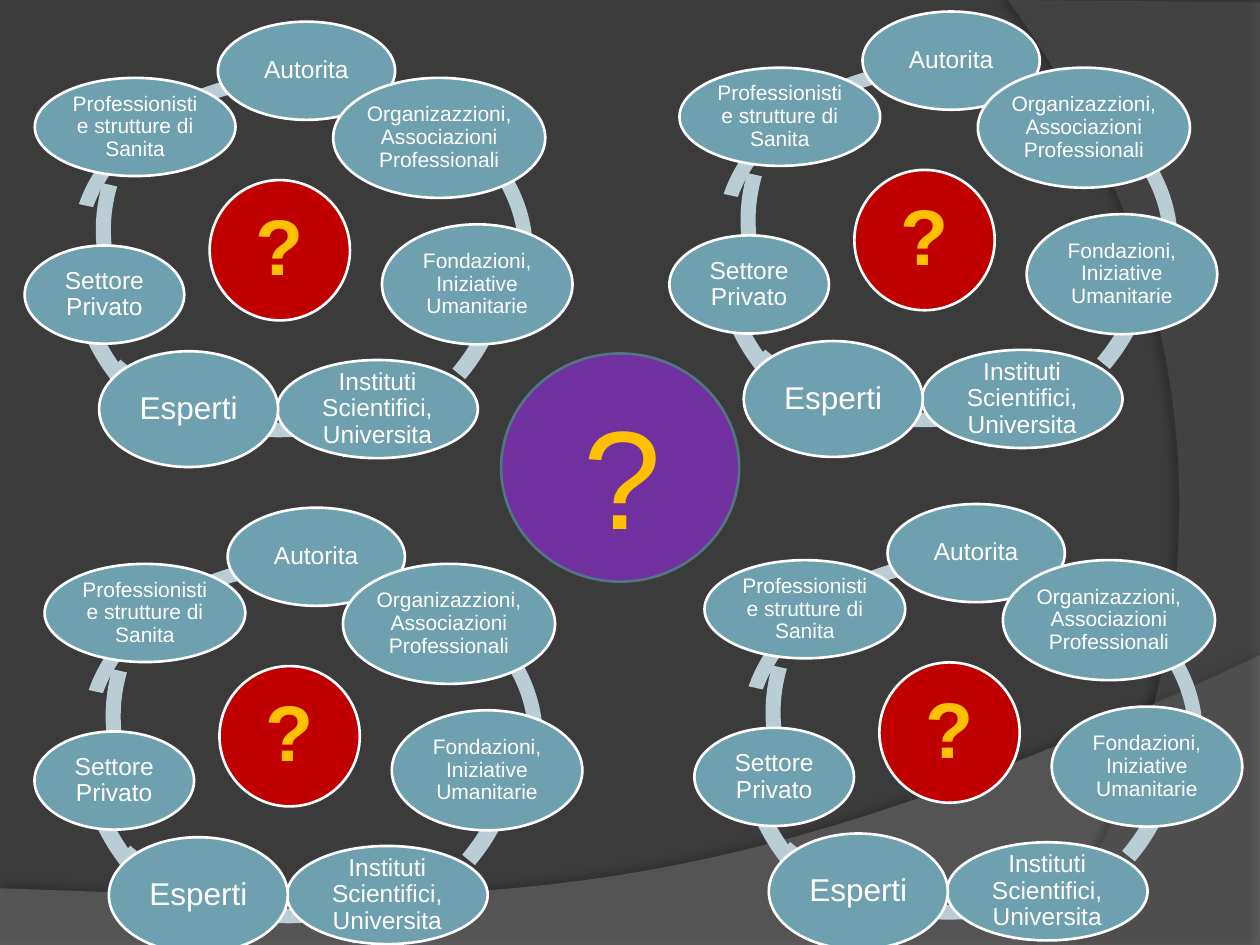
from dataclasses import dataclass

from lxml.etree import SubElement
from pptx import Presentation
from pptx.dml.color import RGBColor
from pptx.enum.shapes import MSO_SHAPE
from pptx.enum.text import MSO_ANCHOR, PP_ALIGN
from pptx.oxml.ns import qn
from pptx.util import Pt


@dataclass(frozen=True)
class Theme:
    """Colours, font and type sizes of the slide."""
    background: str = "3B3B3B"
    wave: str = "7F7F7F"
    side: str = "5E5E5E"
    shadow: str = "000000"
    ring: str = "BACDD4"
    member: str = "6EA0B0"
    core: str = "C00000"
    hub: str = "7030A0"
    hub_line: str = "517682"
    white: str = "FFFFFF"
    question: str = "FFC000"
    font: str = "Arial"
    small: int = 12
    medium: int = 14
    large: int = 18
    core_size: int = 45
    hub_size: int = 80
    line: float = 1.5


THEME = Theme()
CLUSTER_OFFSETS = [(0, 0), (368.4, -5.8), (5.6, 277.7), (382.7, 275.6)]
RING_ARCS = [
    ((37.4, 18, 232.6, 244.1), 132.9, 169.36),
    ((28.2, 30.2, 207.4, 207.4), 97.04, 131.35),
    ((33.6, 42.5, 251.3, 207.4), 72.2, 100.42),
    ((33.6, 29.5, 256.3, 236.2), 34.8, 73.2),
    ((53.2, 23, 240.5, 236.2), 7.26, 39.27),
    ((40.4, 40.3, 264.2, 207.4), 192.13, 6.39),
    ((54.8, 23.8, 241.9, 215.3), 163.25, 192.89),
]
CORE_FRAME = (119.8, 102.9, 80.2, 80.2)
MEMBERS = [
    ("Autorita", THEME.medium, (124.5, 12.4, 101.3, 56.1)),
    ("Organizazzioni, Associazioni Professionali", THEME.small, (190.4, 44.5, 121.2, 68.6)),
    ("Fondazioni, Iniziative Umanitarie", THEME.small, (218.3, 128.2, 108.9, 68.6)),
    ("Instituti Scientifici, Universita", THEME.medium, (158.4, 205.7, 114.7, 56.1)),
    ("Esperti", THEME.large, (56.6, 200.7, 102.3, 66.2)),
    ("Settore Privato", THEME.medium, (14.1, 140.3, 91.2, 56.1)),
    ("Professionisti e strutture di Sanita", THEME.small, (19.9, 44.5, 114.7, 56.1)),
]


def to_points(frame, offset=(0, 0)):
    """Return a frame as lengths, moved by an offset."""
    left, top, width, height = frame
    return Pt(left + offset[0]), Pt(top + offset[1]), Pt(width), Pt(height)


def paint(shape, fill, line=None):
    """Fill a shape, and outline it when a line colour is given."""
    shape.shadow.inherit = False
    shape.fill.solid()
    shape.fill.fore_color.rgb = RGBColor.from_string(fill)
    if line:
        shape.line.color.rgb = RGBColor.from_string(line)
        shape.line.width = Pt(THEME.line)
    else:
        shape.line.fill.background()


def write(shape, text, size, color, bold=False):
    """Set the text of a shape as one run."""
    shape.text_frame.word_wrap = True
    para = shape.text_frame.paragraphs[0]
    para.text = text
    span = para.runs[0]
    span.font.name = THEME.font
    span.font.size = Pt(size)
    span.font.bold = bold
    span.font.color.rgb = RGBColor.from_string(color)
    return para


def add_bubble(shapes, frame, fill, text, size, color, bold=False):
    """Add an ellipse with centred text."""
    bubble = shapes.add_shape(MSO_SHAPE.OVAL, *frame)
    paint(bubble, fill, THEME.white)
    text_frame = bubble.text_frame
    text_frame.vertical_anchor = MSO_ANCHOR.MIDDLE
    inset = Pt(size * 0.08)
    text_frame.margin_left = text_frame.margin_right = inset
    text_frame.margin_top = text_frame.margin_bottom = inset
    para = write(bubble, text, size, color, bold)
    para.alignment = PP_ALIGN.CENTER
    para.line_spacing = 0.9


def add_cluster(page, offset):
    """Add a ring of members around a question mark."""
    shapes = page.shapes.add_group_shape().shapes
    for frame, start, end in RING_ARCS:
        arc = shapes.add_shape(MSO_SHAPE.BLOCK_ARC, *to_points(frame, offset))
        arc.adjustments[0] = start * 0.6
        arc.adjustments[1] = end * 0.6
        arc.adjustments[2] = 0.04
        paint(arc, THEME.ring)
    add_bubble(shapes, to_points(CORE_FRAME, offset), THEME.core, "?",
               THEME.core_size, THEME.question, True)
    for text, size, frame in MEMBERS:
        add_bubble(shapes, to_points(frame, offset), THEME.member, text, size, THEME.white)


def curve(start, first, second, end, steps=40):
    """Return points along a cubic curve."""
    fractions = [step / steps for step in range(steps + 1)]
    return [
        tuple((1 - t) ** 3 * a + 3 * (1 - t) ** 2 * t * b + 3 * (1 - t) * t ** 2 * c + t ** 3 * d
              for a, b, c, d in zip(start, first, second, end))
        for t in fractions
    ]


def add_backdrop(page, points, color, opacity, shadow_opacity, distance, direction):
    """Add a translucent outline with a soft shadow."""
    vertices = [(Pt(x), Pt(y)) for x, y in points]
    builder = page.shapes.build_freeform(*vertices[0], scale=1.0)
    builder.add_line_segments(vertices[1:], close=True)
    shape = builder.convert_to_shape()
    paint(shape, color)
    properties = shape.fill._xPr
    tint = properties.find(qn("a:solidFill"))[0]
    SubElement(tint, qn("a:alpha"), val=str(opacity * 1000))
    shadow = SubElement(properties.find(qn("a:effectLst")), qn("a:outerShdw"),
                        blurRad=str(Pt(4)), dist=str(Pt(distance)),
                        dir=str(direction * 60000), algn="ctr", rotWithShape="0")
    shade = SubElement(shadow, qn("a:srgbClr"), val=THEME.shadow)
    SubElement(shade, qn("a:alpha"), val=str(shadow_opacity * 1000))


def add_hub(page):
    """Add the large central question mark."""
    hub = page.shapes.add_shape(MSO_SHAPE.OVAL, *to_points((286.4, 202, 136, 130.4)))
    paint(hub, THEME.hub, THEME.hub_line)
    box = page.shapes.add_textbox(*to_points((326.2, 218.9, 51.1, 104.4)))
    write(box, "?", THEME.hub_size, THEME.question)


def main():
    """Build the slide and save it."""
    deck = Presentation()
    deck.slide_width, deck.slide_height = Pt(720), Pt(540)
    page = deck.slides.add_slide(deck.slide_layouts[6])
    page.background.fill.solid()
    page.background.fill.fore_color.rgb = RGBColor.from_string(THEME.background)
    wave = curve((720, 374.4), (402.5, 524.9), (281.5, 517.7), (0, 507.6))
    add_backdrop(page, [(0, 540), (720, 540)] + wave, THEME.wave, 45, 35, 3.5, 270)
    side = curve((591.1, 540), (673.2, 445.7), (733, 216), (576, 0))
    add_backdrop(page, [(720, 1.4), (720, 540)] + side, THEME.side, 40, 45, 4, 180)
    for offset in CLUSTER_OFFSETS:
        add_cluster(page, offset)
    add_hub(page)
    deck.save("out.pptx")


if __name__ == "__main__":
    main()
